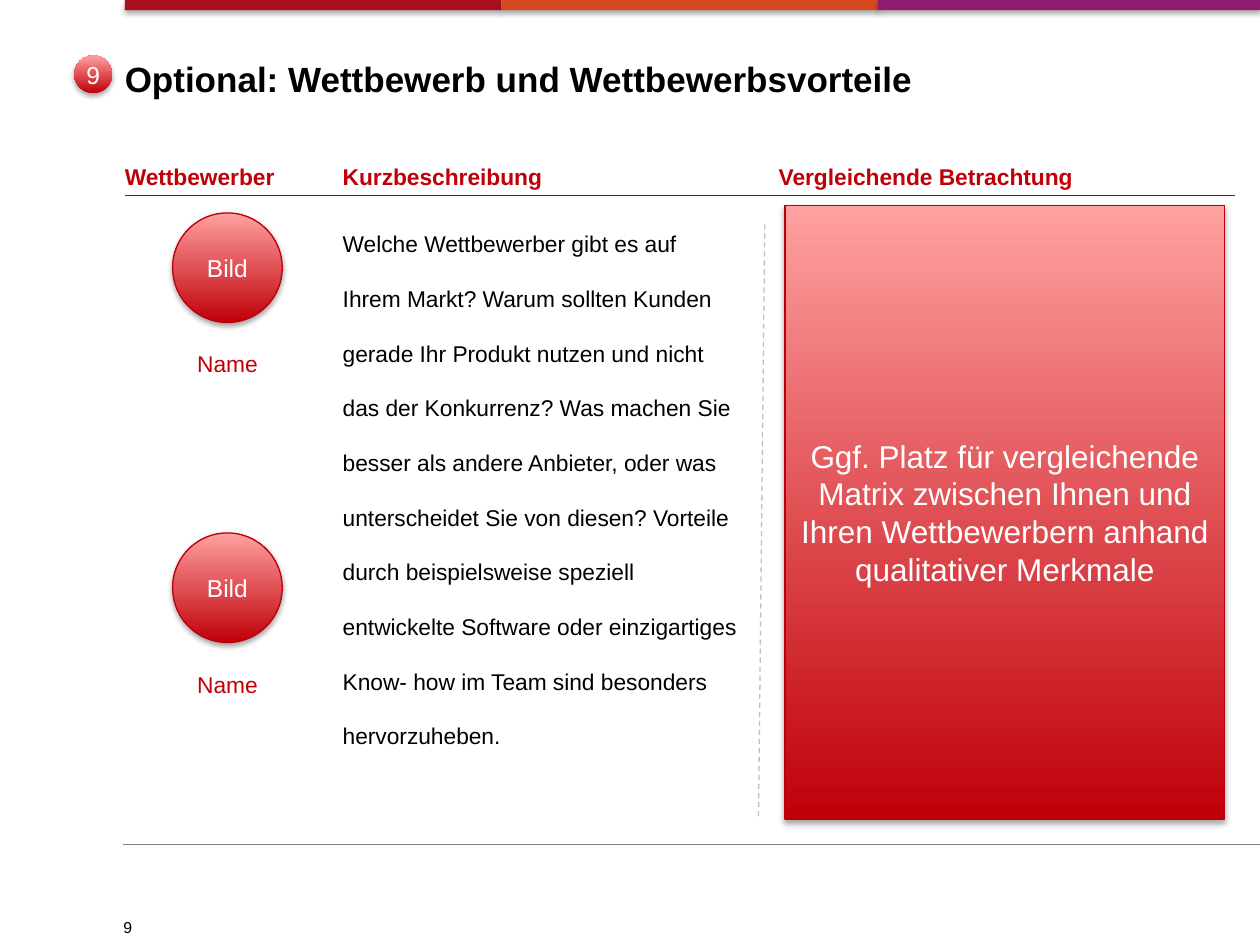
from lxml import etree
from pptx import Presentation
from pptx.dml.color import RGBColor
from pptx.enum.dml import MSO_LINE
from pptx.enum.shapes import MSO_CONNECTOR, MSO_SHAPE
from pptx.enum.text import MSO_ANCHOR, PP_ALIGN
from pptx.oxml import parse_xml
from pptx.oxml.ns import qn
from pptx.util import Inches, Pt

RECT, OVAL = MSO_SHAPE.RECTANGLE, MSO_SHAPE.OVAL
LEFT, CENTER = PP_ALIGN.LEFT, PP_ALIGN.CENTER
TOP, MIDDLE = MSO_ANCHOR.TOP, MSO_ANCHOR.MIDDLE
STRAIGHT, DASH = MSO_CONNECTOR.STRAIGHT, MSO_LINE.DASH
RED, BLACK, WHITE = "C00009", "000000", "FFFFFF"
SHADOW = (
    '<a:outerShdw xmlns:a="http://schemas.openxmlformats.org/drawingml/2006/main"'
    ' blurRad="39370" dist="22860" dir="5400000" rotWithShape="0">'
    '<a:srgbClr val="000000"><a:alpha val="35000"/></a:srgbClr></a:outerShdw>'
)


def write(shape, text, size=13, color=BLACK, bold=False, align=LEFT,
          anchor=TOP, space=None, wrap=True, inset=0):
    frame = shape.text_frame
    frame.word_wrap = wrap
    frame.vertical_anchor = anchor
    if inset is not None:
        frame.margin_left = frame.margin_right = Inches(inset)
        frame.margin_top = frame.margin_bottom = Inches(inset)
    frame.text = text
    para = frame.paragraphs[0]
    para.alignment = align
    if space:
        para.line_spacing = space
    font = para.runs[0].font
    font.name, font.size, font.bold = "Arial", Pt(size), bold
    font.color.rgb = RGBColor.from_string(color)


def draw(kind, box, fill=None, line=None):
    shape = slide.shapes.add_shape(kind, *map(Inches, box))
    if fill:
        shape.fill.solid()
        shape.fill.fore_color.rgb = RGBColor.from_string(fill)
    else:
        shape.fill.gradient()
        shape.fill.gradient_angle = 90
        for stop, color in zip(shape.fill.gradient_stops, (RED, "FFA0A0")):
            stop.color.rgb = RGBColor.from_string(color)
    if line:
        shape.line.color.rgb = RGBColor.from_string(line)
        shape.line.width = Pt(0.75)
    else:
        shape.line.fill.background()
    shape.shadow.inherit = False
    shape.element.spPr.find(qn("a:effectLst")).append(parse_xml(SHADOW))
    return shape


deck = Presentation()
deck.slide_width, deck.slide_height = Inches(10), Inches(7.5)
slide = deck.slides.add_slide(deck.slide_layouts[5])

title = slide.shapes.title
title.left, title.top = Inches(0.99), Inches(0.4)
title.width, title.height = Inches(8.81), Inches(0.96)
write(title, "Optional: Wettbewerb und Wettbewerbsvorteile",
      size=20, bold=True, space=Pt(28))

for left, width, color in ((0.99, 2.99, "AA0F1F"), (3.98, 2.99, "D7471F"),
                           (6.97, 3.03, "901B6E")):
    draw(RECT, (left, 0, width, 0.08), fill=color)

for ends, color, width, dash in (
    ((0.98, 6.7, 10, 6.7), "808080", 0.5, None),
    ((0.99, 1.55, 9.8, 1.55), "740B5C", 0.75, None),
    ((6.07, 1.78, 6.02, 6.51), "BFBFBF", 0.75, DASH),
):
    rule = slide.shapes.add_connector(STRAIGHT, *map(Inches, ends))
    rule.line.color.rgb = RGBColor.from_string(color)
    rule.line.width = Pt(width)
    if dash:
        rule.line.dash_style = dash
    etree.SubElement(rule.element.spPr, qn("a:effectLst"))

head = dict(color=RED, bold=True)
name = dict(color=RED, align=CENTER, space=2.0)
story = (
    "Welche Wettbewerber gibt es auf Ihrem Markt? Warum sollten Kunden gerade "
    "Ihr Produkt nutzen und nicht das der Konkurrenz? Was machen Sie besser als "
    "andere Anbieter, oder was unterscheidet Sie von diesen? Vorteile durch "
    "beispielsweise speziell entwickelte Software oder einzigartiges Know- how "
    "im Team sind besonders hervorzuheben."
)
for box, text, look in (
    ((0.99, 1.29, 1.49, 0.24), "Wettbewerber", head),
    ((2.72, 1.29, 3.23, 0.24), "Kurzbeschreibung", head),
    ((6.18, 1.29, 3.62, 0.24), "Vergleichende Betrachtung", head),
    ((2.72, 1.61, 3.15, 4.31), story, dict(space=2.0)),
    ((0.99, 2.56, 1.63, 0.37), "Name", name),
    ((0.99, 5.11, 1.63, 0.37), "Name", name),
    ((0.98, 7.27, 1.34, 0.19), "9", dict(size=9, space=Pt(11.8), wrap=False)),
):
    write(slide.shapes.add_textbox(*map(Inches, box)), text, **look)

label = dict(color=WHITE, align=CENTER, anchor=MIDDLE)
badge = draw(OVAL, (0.59, 0.44, 0.3, 0.3))
write(badge, "9", size=14, wrap=False, **label)
for top in (1.69, 4.23):
    photo = draw(OVAL, (1.37, top, 0.87, 0.87), line="BC0009")
    write(photo, "Bild", size=14, inset=None, **label)
panel = draw(RECT, (6.23, 1.63, 3.49, 4.87), line="BC0009")
write(panel, "Ggf. Platz für vergleichende Matrix zwischen Ihnen und Ihren "
      "Wettbewerbern anhand qualitativer Merkmale", size=18, inset=None, **label)

deck.save("out.pptx")
